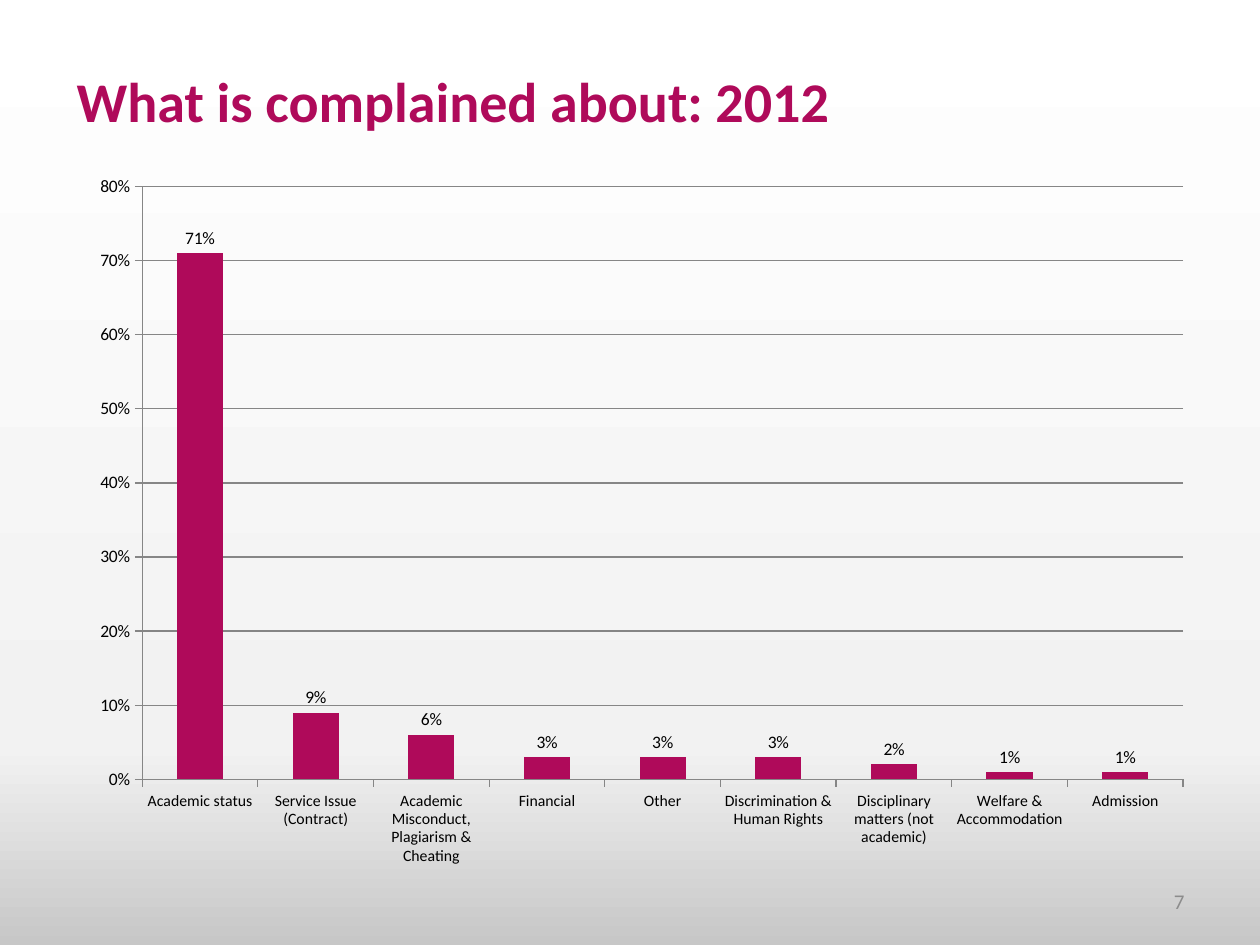
from copy import deepcopy

from lxml import etree
from pptx import Presentation
from pptx import util as u
from pptx.chart.data import CategoryChartData
from pptx.dml.color import RGBColor
from pptx.enum import chart as charts, text
from pptx.oxml.ns import qn

COLORS = {
    "accent": "AF0A5A",
    "ink": "000000",
    "axis": "868686",
    "number": "8C8C8C",
    "top": "FFFFFF",
    "middle": "F2F2F2",
    "bottom": "C7C7C7",
}

COMPLAINTS = {
    "Academic status": 0.71,
    "Service Issue (Contract)": 0.09,
    "Academic Misconduct, Plagiarism & Cheating": 0.06,
    "Financial": 0.03,
    "Other": 0.03,
    "Discrimination & Human Rights": 0.03,
    "Disciplinary matters (not academic)": 0.02,
    "Welfare & Accommodation": 0.01,
    "Admission": 0.01,
}


def rgb(name):
    return RGBColor.from_string(COLORS[name])


def format_font(font, size, color="ink", bold=False):
    font.name = "Calibri"
    font.size = u.Pt(size)
    font.bold = bold
    font.color.rgb = rgb(color)


def write(frame, words, align=text.PP_ALIGN.LEFT, **style):
    frame.word_wrap = True
    frame.vertical_anchor = text.MSO_ANCHOR.MIDDLE
    line = frame.paragraphs[0]
    line.alignment = align
    run = line.add_run()
    run.text = words
    format_font(run.font, **style)


class Deck:
    def __init__(self):
        self.prs = Presentation()
        self.prs.slide_width = u.Inches(10)
        self.prs.slide_height = u.Inches(7.5)
        self.slide = self.prs.slides.add_slide(self.prs.slide_layouts[6])

    def background(self, stops):
        fill = self.slide.background.fill
        fill.gradient()
        fill.gradient_angle = 270
        stop_list = fill._fill._gradFill.find(qn("a:gsLst"))
        while len(stop_list) < len(stops):
            stop_list.append(deepcopy(stop_list[0]))
        for stop, (position, color) in zip(fill.gradient_stops, stops):
            stop.position = position
            stop.color.rgb = rgb(color)

    def label(self, words, box, **style):
        area = self.slide.shapes.add_textbox(*map(u.Inches, box))
        write(area.text_frame, words, **style)

    def columns(self, values, box, plot):
        data = CategoryChartData(number_format="0%")
        data.categories = list(values)
        data.add_series("Series 1", list(values.values()))
        chart = self.slide.shapes.add_chart(
            charts.XL_CHART_TYPE.COLUMN_CLUSTERED, *map(u.Inches, box), data
        ).chart
        chart.has_title = False
        chart.has_legend = False
        format_font(chart.font, 10)
        self.place_plot(chart, plot)

        bars = chart.plots[0]
        bars.gap_width = 150
        bars.vary_by_categories = False
        bars.series[0].format.fill.solid()
        bars.series[0].format.fill.fore_color.rgb = rgb("accent")
        bars.has_data_labels = True
        labels = bars.data_labels
        labels.show_value = True
        labels.number_format = "0%"
        labels.number_format_is_linked = False
        labels.position = charts.XL_LABEL_POSITION.OUTSIDE_END
        format_font(labels.font, 10)

        shares = chart.value_axis
        shares.minimum_scale = 0
        shares.maximum_scale = 0.8
        shares.major_unit = 0.1
        shares.has_major_gridlines = True
        shares.tick_labels.number_format = "0%"
        shares.tick_labels.number_format_is_linked = False
        for axis, size in ((shares, 10), (chart.category_axis, 9)):
            axis.major_tick_mark = charts.XL_TICK_MARK.OUTSIDE
            self.rule(axis.format.line)
            format_font(axis.tick_labels.font, size)
        self.rule(shares.major_gridlines.format.line)

    def rule(self, line):
        line.width = u.Pt(0.75)
        line.color.rgb = rgb("axis")

    def place_plot(self, chart, plot):
        area = chart._chartSpace.find(".//" + qn("c:plotArea"))
        for old in area.findall(qn("c:layout")):
            area.remove(old)
        layout = etree.Element(qn("c:layout"))
        manual = etree.SubElement(layout, qn("c:manualLayout"))
        settings = {"layoutTarget": "inner", "xMode": "edge", "yMode": "edge"}
        settings.update(zip("xywh", plot))
        for tag, value in settings.items():
            etree.SubElement(manual, qn(f"c:{tag}"), val=str(value))
        area.insert(0, layout)


def main():
    deck = Deck()
    deck.background([(0, "top"), (0.79, "middle"), (1, "bottom")])
    deck.label("What is complained about: 2012", (0.51, 0.44, 6.46, 0.71),
               size=32, color="accent", bold=True)
    deck.columns(COMPLAINTS, (0.59, 1.31, 8.98, 5.67), (0.06, 0.03, 0.92, 0.83))
    deck.label("7", (7.17, 6.95, 2.33, 0.4), align=text.PP_ALIGN.RIGHT,
               size=12, color="number")
    deck.prs.save("out.pptx")


if __name__ == "__main__":
    main()
